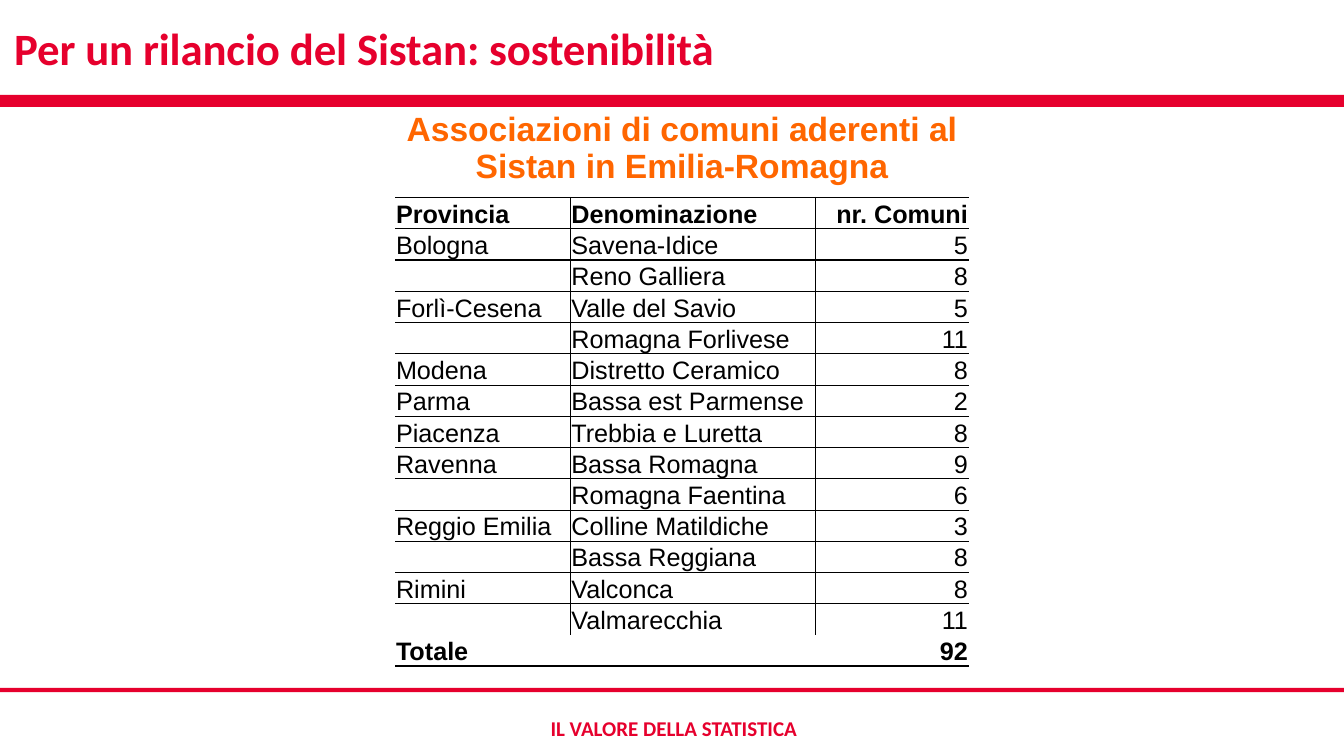
from lxml import etree
from pptx import Presentation
from pptx.dml.color import RGBColor
from pptx.enum.shapes import MSO_SHAPE
from pptx.enum.text import MSO_ANCHOR, PP_ALIGN
from pptx.oxml.ns import qn
from pptx.util import Pt

RECTANGLE = MSO_SHAPE.RECTANGLE
TOP, MIDDLE, BOTTOM = MSO_ANCHOR.TOP, MSO_ANCHOR.MIDDLE, MSO_ANCHOR.BOTTOM
LEFT, CENTER, RIGHT = PP_ALIGN.LEFT, PP_ALIGN.CENTER, PP_ALIGN.RIGHT
COLORS = {"red": "E6002D", "orange": "FF6600", "black": "000000"}
NO_STYLE = "{2D5ABB26-0587-4C30-8999-92F81FD0307C}"
SLIDE_WIDTH = 960


def format_text(frame, font_name, size, color, bold, align):
    for para in frame.paragraphs:
        para.alignment = align
        for span in para.runs:
            span.font.name = font_name
            span.font.size = Pt(size)
            span.font.bold = bold
            span.font.color.rgb = RGBColor.from_string(COLORS[color])


def add_borders(cell, widths):
    """Draw black cell borders; widths maps the sides L, R, T, B to points, in that order."""
    properties = cell._tc.get_or_add_tcPr()
    for side, width in widths.items():
        line = etree.SubElement(properties, qn(f"a:ln{side}"), w=str(Pt(width)))
        fill = etree.SubElement(line, qn("a:solidFill"))
        etree.SubElement(fill, qn("a:srgbClr"), val=COLORS["black"])


deck = Presentation()
deck.slide_width, deck.slide_height = Pt(SLIDE_WIDTH), Pt(540)
page = deck.slides.add_slide(deck.slide_layouts[5])

# Red bars and footer
for top, height in ((67.7, 8.6), (491.4, 3)):
    bar = page.shapes.add_shape(RECTANGLE, 0, Pt(top), Pt(SLIDE_WIDTH), Pt(height))
    bar.shadow.inherit = False
    bar.fill.solid()
    bar.fill.fore_color.rgb = RGBColor.from_string(COLORS["red"])
    bar.line.fill.background()

footer = page.shapes.add_textbox(Pt(203.8), Pt(507.6), Pt(555), Pt(25.4)).text_frame
footer.word_wrap = True
footer.text = "IL VALORE DELLA STATISTICA"
format_text(footer, "Calibri", 15, "red", True, CENTER)

# Title
title = page.shapes.title
title.left, title.top, title.width, title.height = Pt(2.9), Pt(2.9), Pt(945.4), Pt(62.6)
title.text_frame.text = "Per un rilancio del Sistan: sostenibilità"
title.text_frame.vertical_anchor = MIDDLE
format_text(title.text_frame, "Calibri", 32, "red", True, LEFT)
for span in title.text_frame.paragraphs[0].runs:
    span._r.get_or_add_rPr().set("spc", "-10")

# Table of associations by province
provinces = {
    "Bologna": [("Savena-Idice", 5), ("Reno Galliera", 8)],
    "Forlì-Cesena": [("Valle del Savio", 5), ("Romagna Forlivese", 11)],
    "Modena": [("Distretto Ceramico", 8)],
    "Parma": [("Bassa est Parmense", 2)],
    "Piacenza": [("Trebbia e Luretta", 8)],
    "Ravenna": [("Bassa Romagna", 9), ("Romagna Faentina", 6)],
    "Reggio Emilia": [("Colline Matildiche", 3), ("Bassa Reggiana", 8)],
    "Rimini": [("Valconca", 8), ("Valmarecchia", 11)],
}
rows = [("Associazioni di comuni aderenti al Sistan in Emilia-Romagna", "", ""),
        ("Provincia", "Denominazione", "nr. Comuni")]
for province, associations in provinces.items():
    for index, (name, count) in enumerate(associations):
        rows.append(("" if index else province, name, str(count)))
rows.append(("Totale", "", "92"))
last = len(rows) - 1

column_widths = (125.3, 174.8, 109.8)
row_heights = [62.6, 21.8] + [20.9] * (last - 2) + [22]
frame = page.shapes.add_table(len(rows), 3, Pt(282.2), Pt(78.5),
                              Pt(sum(column_widths)), Pt(sum(row_heights)))
table = frame.table
table.first_row = table.horz_banding = False
frame._element.find(".//" + qn("a:tableStyleId")).text = NO_STYLE
for column, width in zip(table.columns, column_widths):
    column.width = Pt(width)
for row, height in zip(table.rows, row_heights):
    row.height = Pt(height)

for row_index, texts in enumerate(rows):
    heading = row_index == 0
    body = 0 < row_index < last
    for column_index, text in enumerate(texts):
        cell = table.cell(row_index, column_index)
        cell.margin_left = cell.margin_right = cell.margin_top = Pt(0.7)
        cell.margin_bottom = 0
        cell.vertical_anchor = TOP if heading else BOTTOM
        cell.text_frame.text = text
        if heading:
            format_text(cell.text_frame, "Arial", 24, "orange", True, CENTER)
        else:
            format_text(cell.text_frame, "Arial", 18, "black", row_index in (1, last),
                        RIGHT if column_index == 2 else LEFT)

        borders = {}
        if body and column_index > 0:
            borders["L"] = 0.5
        if body and column_index < 2:
            borders["R"] = 0.5
        if body and rows[row_index][0]:
            borders["T"] = 1 if row_index <= 2 else 0.5
        if row_index in (0, 1, last):
            borders["B"] = 1
        elif row_index < last - 1 and rows[row_index + 1][0]:
            borders["B"] = 0.5
        add_borders(cell, borders)
        cell.fill.background()

table.cell(0, 0).merge(table.cell(0, 2))

deck.save("out.pptx")
